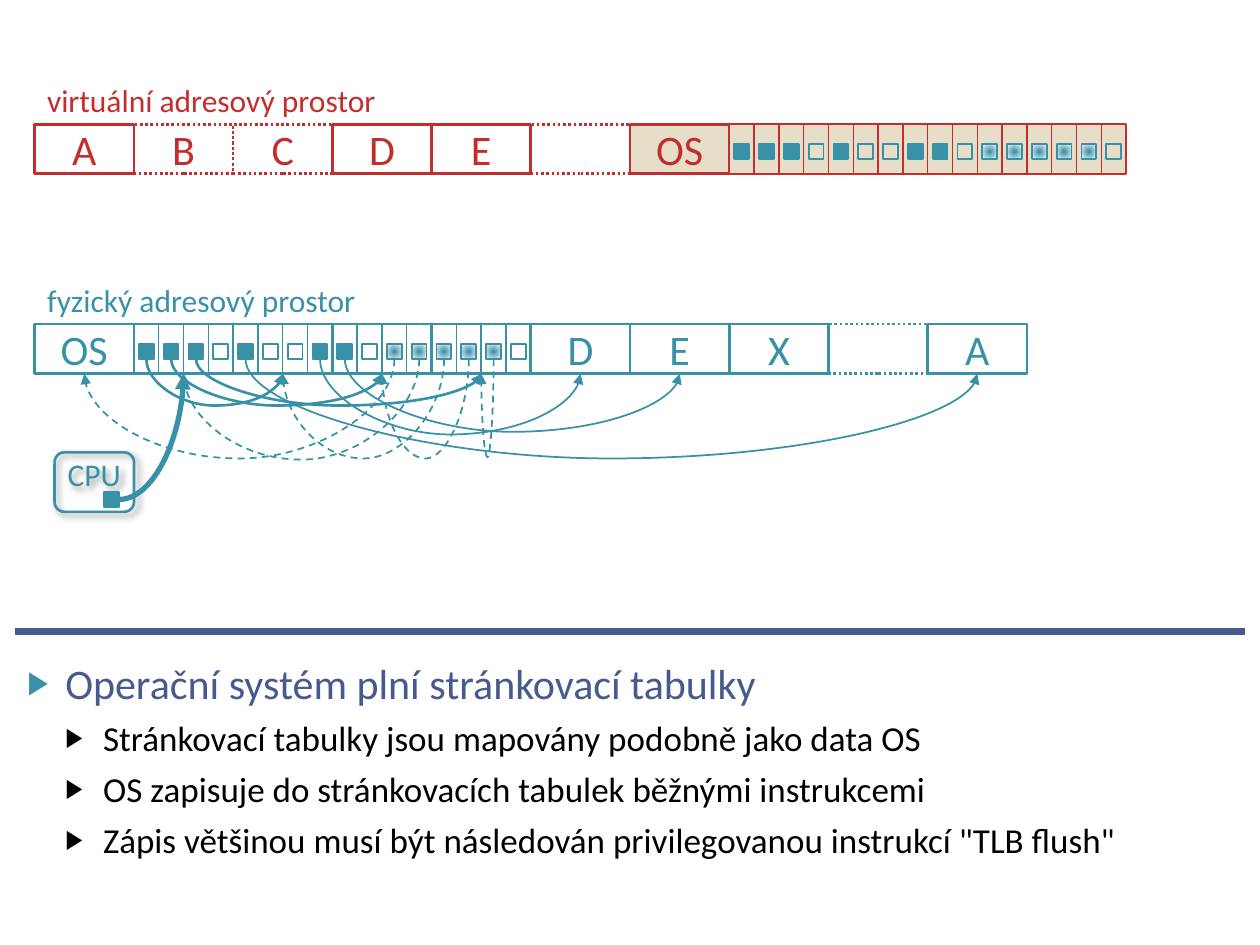
from lxml import etree
from pptx import Presentation
from pptx.dml.color import RGBColor
from pptx.enum import dml, shapes, text
from pptx.oxml.ns import qn
from pptx.util import Pt

RED, TEAL, BLUE, SAND = "C32D2E", "3891A7", "475A8D", "E7DEC9"
SLOT, HIGH = 56.7, 28.35      # one block of an address space
CELL, MARK = SLOT / 4, 8.5    # one table entry and its mark
DROP = 11.5                   # from top of a block to its marks
PAGES = "fffofooffogggggo"    # f full, o open, g graded
DOT = dml.MSO_LINE.ROUND_DOT
DASH = dml.MSO_LINE.DASH


def hue(code):
    return RGBColor.from_string(code)


def node(parent, tag, **attrs):
    return etree.SubElement(parent, qn(tag), attrs)


def write(par, words, size=24, color="000000", align=None):
    run = par.add_run()
    run.text = words
    run.font.name, run.font.size = "Calibri", Pt(size)
    run.font.color.rgb = hue(color)
    par.alignment = align


def label(slide, words, x, y, wide, color):
    box = slide.shapes.add_textbox(Pt(x), Pt(y), Pt(wide), Pt(29))
    box.text_frame.word_wrap = False
    write(box.text_frame.paragraphs[0], words, size=18, color=color)


def block(slide, x, y, wide, high, color, weight=1.5, fill=None, dash=None,
          words="", size=24, kind=shapes.MSO_SHAPE.RECTANGLE):
    box = slide.shapes.add_shape(kind, Pt(x), Pt(y), Pt(wide), Pt(high))
    box.shadow.inherit = False
    if fill:
        box.fill.solid()
        box.fill.fore_color.rgb = hue(fill)
    else:
        box.fill.background()
    box.line.color.rgb, box.line.width = hue(color), Pt(weight)
    if dash:
        box.line.dash_style = dash
    if words:
        frame = box.text_frame
        frame.margin_left = frame.margin_right = 0
        frame.margin_top = frame.margin_bottom = 0
        write(frame.paragraphs[0], words, size, color, text.PP_ALIGN.CENTER)
    return box


def mark(slide, x, y, state="f"):
    box = block(slide, x, y, MARK, MARK, TEAL, weight=1,
                fill=TEAL if state == "f" else None)
    if state == "g":
        box.fill.gradient()
        for stop, color in zip(box.fill.gradient_stops, (TEAL, "FFFFFF")):
            stop.color.rgb = hue(color)
        grad = box._element.spPr.find(qn("a:gradFill"))
        grad.remove(grad.find(qn("a:lin")))
        ring = node(grad, "a:path", path="circle")
        node(ring, "a:fillToRect", l="50000", t="50000", r="50000", b="50000")


def table(slide, x, y, color, fill=None):
    for i, state in enumerate(PAGES):
        left = x + i * CELL
        block(slide, left, y, CELL, HIGH, color, weight=0.75, fill=fill)
        mark(slide, left + (CELL - MARK) / 2, y + DROP, state)


def space(slide, x, y, title, wide, color, names, dots, first, fill=None):
    """Row of blocks; the page tables start at block number first."""
    label(slide, title, x, y - 28.3, wide, color)
    # Dotted blocks lie below the solid ones
    for i in sorted(range(len(names)), key=lambda i: i not in dots):
        block(slide, x + i * SLOT, y, SLOT, HIGH, color, words=names[i],
              dash=DOT if i in dots else None,
              fill=fill if first - 1 <= i < first + 4 else None)
    table(slide, x + first * SLOT, y, color, fill)


def link(slide, x1, y1, x2, y2, weight, kind=shapes.MSO_CONNECTOR.CURVE,
         color=TEAL, dash=None, tail=True):
    line = slide.shapes.add_connector(kind, Pt(x1), Pt(y1), Pt(x2), Pt(y2))
    line.line.color.rgb, line.line.width = hue(color), Pt(weight)
    if dash:
        line.line.dash_style = dash
    if tail:
        node(line.line._get_or_add_ln(), "a:tailEnd", type="triangle")
    node(line._element.spPr, "a:effectLst")
    return line


def swing(slide, x1, y1, x2, y2, depth, weight, dash):
    """Curve that hangs below both of its ends by depth."""
    line = link(slide, x1, y1, x2, y2, weight, dash=dash)
    wide, high = y2 - y1, abs(x2 - x1)
    line.left, line.top = Pt((x1 + x2 - wide) / 2), Pt((y1 + y2 - high) / 2)
    line.width, line.height = Pt(wide), Pt(high)
    frame = line._element.spPr.xfrm
    frame.attrib.pop("flipH", None)
    if x2 > x1:
        frame.set("flipH", "1")
    frame.set("rot", "16200000" if x2 > x1 else "5400000")
    geom = line._element.spPr.find(qn("a:prstGeom"))
    guides = geom.find(qn("a:avLst"))
    if guides is None:
        guides = node(geom, "a:avLst")
    node(guides, "a:gd", name="adj1", fmla=f"val {round(depth / wide * 100000)}")


def links(slide, x, y):
    # Page entry, block it points to, depth, line width, dash
    for page, goal, depth, weight, dash in (
            (0, 2, 26.5, 1.5, None), (1, 3, 26.5, 1.5, None),
            (2, 4, 26.5, 1.5, None), (4, 9, 56.7, 1, None),
            (7, 5, 43, 1, None), (8, 6, 41.5, 1, None),
            (10, 0, 56.7, 1, DASH), (11, 1, 57.4, 1, DASH),
            (12, 2, 56.7, 1, DASH), (13, 3, 56.7, 1, DASH),
            (14, 4, 56, 1, DASH)):
        swing(slide, x + SLOT + (page + 0.5) * CELL, y + DROP + MARK,
              x + (goal + 0.5) * SLOT, y + HIGH, depth, weight, dash)


def chip(slide, x, y, wide, high, goal):
    box = block(slide, x, y, wide, high, TEAL, words="CPU", size=18,
                kind=shapes.MSO_SHAPE.ROUNDED_RECTANGLE)
    box.text_frame.vertical_anchor = text.MSO_ANCHOR.TOP
    glow = node(box._element.spPr.find(qn("a:effectLst")), "a:outerShdw",
                blurRad=str(Pt(4)), dist=str(Pt(3)), dir="2700000",
                algn="tl", rotWithShape="0")
    node(node(glow, "a:srgbClr", val="000000"), "a:alpha", val="40000")
    # Base register and its pointer to the table
    left, top = x + wide - MARK - 8.5, y + high - MARK - 2.8
    curve = link(slide, left + MARK, top + MARK / 2, *goal, 3)
    curve._element.spPr.find(qn("a:prstGeom")).set("prst", "curvedConnector2")
    mark(slide, left, top)


def notes(slide, x, y, wide, high):
    link(slide, x, y - 11.5, x + wide, y - 11.5, 4, color=BLUE, tail=False,
         kind=shapes.MSO_CONNECTOR.STRAIGHT)
    body = slide.placeholders[1]
    body.left, body.top, body.width, body.height = map(Pt, (x, y, wide, high))
    frame = body.text_frame
    frame.auto_size = text.MSO_AUTO_SIZE.NONE
    for i, (level, words) in enumerate((
            (0, "Operační systém plní stránkovací tabulky"),
            (1, "Stránkovací tabulky jsou mapovány podobně jako data OS"),
            (1, "OS zapisuje do stránkovacích tabulek běžnými instrukcemi"),
            (1, "Zápis většinou musí být následován privilegovanou instrukcí "
                "\"TLB flush\""))):
        par = frame.add_paragraph() if i else frame.paragraphs[0]
        par.level, par.space_before = level, Pt(5 if level else 6)
        write(par, words, size=20 if level else 24,
              color="000000" if level else BLUE)
        # Bullet
        props = par._p.get_or_add_pPr()
        props.set("marL", str(Pt(21.6 * (level + 1))))
        props.set("indent", str(Pt(-21.6)))
        node(node(props, "a:buClr"), "a:srgbClr",
             val="000000" if level else TEAL)
        node(props, "a:buSzPct", val="76000")
        node(props, "a:buChar", char="▶")


def main():
    deck = Presentation()
    deck.slide_width, deck.slide_height = Pt(720), Pt(540)
    slide = deck.slides.add_slide(deck.slide_layouts[1])
    title = slide.shapes.title._element
    title.getparent().remove(title)
    x, top, low = 19.85, 71, 185.2
    notes(slide, 8.5, 372.2, 703, 136)
    space(slide, x, top, "virtuální adresový prostor", 204.5, RED,
          ["A", "B", "C", "D", "E", "", "OS"] + [""] * 4, (1, 2, 5), 7, SAND)
    space(slide, x, low, "fyzický adresový prostor", 192, TEAL,
          ["OS"] + [""] * 4 + ["D", "E", "X", "", "A"], (8,), 1)
    links(slide, x, low)
    chip(slide, 31.2, 258.5, 45.4, 34, (x + 1.5 * SLOT, low + HIGH))
    deck.save("out.pptx")


if __name__ == "__main__":
    main()
